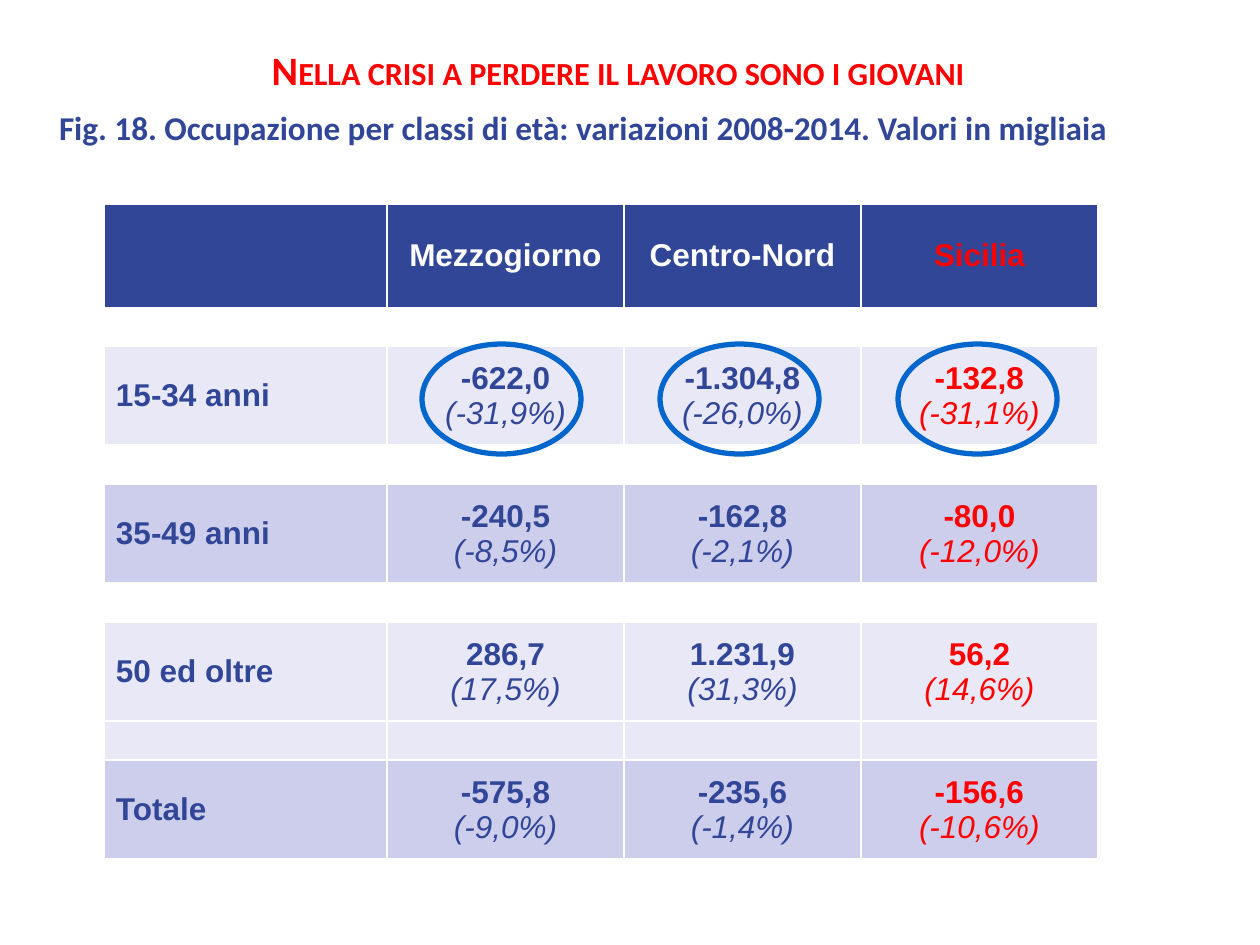
from pptx import Presentation
from pptx.dml.color import RGBColor
from pptx.enum.shapes import MSO_SHAPE as Shape
from pptx.enum.text import MSO_ANCHOR as Anchor, MSO_AUTO_SIZE as Fit, PP_ALIGN as Align
from pptx.oxml.ns import qn
from pptx.util import Emu, Pt
from lxml.etree import SubElement as Sub

NAVY, RED, WHITE = "314697", "FF0000", "FFFFFF"
PALE, LILAC, BLUE = "E8E8F6", "CDCDEC", "0066CC"

HEADS = ["", "Mezzogiorno", "Centro-Nord", "Sicilia"]
# Label, fill of the row, fill of the gap above it, values with shares
GROUPS = [
    ("15-34 anni", PALE, WHITE,
     [("-622,0", "(-31,9%)"), ("-1.304,8", "(-26,0%)"), ("-132,8", "(-31,1%)")]),
    ("35-49 anni", LILAC, WHITE,
     [("-240,5", "(-8,5%)"), ("-162,8", "(-2,1%)"), ("-80,0", "(-12,0%)")]),
    ("50 ed oltre", PALE, WHITE,
     [("286,7", "(17,5%)"), ("1.231,9", "(31,3%)"), ("56,2", "(14,6%)")]),
    ("Totale", LILAC, PALE,
     [("-575,8", "(-9,0%)"), ("-235,6", "(-1,4%)"), ("-156,6", "(-10,6%)")]),
]
COLS = [283, 237, 237, 237]
ROWS = [105, 38, 99] + [39, 99] * 3


def px(n):
    return Emu(round(n * 914400 / 126))


def box(*sides):
    return [px(n) for n in sides]


def paint(hue):
    return RGBColor.from_string(hue)


def style(par, size, face, hue, bold=True, slant=False):
    for run in par.runs:
        font = run.font
        font.size, font.name = Pt(size), face
        font.bold, font.italic = bold, slant
        font.color.rgb = paint(hue)


def pad(part, left, top, right, foot):
    part.margin_left, part.margin_top = px(left), px(top)
    part.margin_right, part.margin_bottom = px(right), px(foot)


def add_line(shape, text, size, hue, align):
    """Fill a text shape with one line of bold Calibri."""
    frame = shape.text_frame
    frame.text = text
    frame.word_wrap, frame.auto_size = True, Fit.SHAPE_TO_FIT_TEXT
    frame.vertical_anchor = Anchor.TOP
    pad(frame, 11, 5, 11, 5)
    par = frame.paragraphs[0]
    par.alignment = align
    style(par, size, "Calibri", hue)
    return par


def add_title(slide):
    title = slide.shapes.title
    title.left, title.top, title.width, title.height = box(71, 40, 1094, 62)
    par = add_line(title, "Nella crisi a perdere il lavoro sono i giovani",
                   23, RED, Align.CENTER)
    par.runs[0].font._element.set("cap", "small")


def add_caption(slide):
    shape = slide.shapes.add_textbox(*box(48, 105, 1191, 50))
    par = add_line(shape, "Fig. 18. Occupazione per classi di età: "
                   "variazioni 2008-2014. Valori in migliaia", 19, NAVY, Align.LEFT)
    par.line_spacing = 0.97


def edge(cell, top=1):
    """Draw white borders; they must come before the fill."""
    props = cell._tc.get_or_add_tcPr()
    for side, width in (("L", 1), ("R", 1), ("T", top), ("B", 1)):
        line = Sub(props, qn("a:ln" + side), w=str(Pt(width)))
        solid = Sub(line, qn("a:solidFill"))
        Sub(solid, qn("a:srgbClr"), val=WHITE)


def set_cell(cell, fill, lines=(), hue=NAVY, align=Align.CENTER, gaps=(0, 0, 0, 0), top=1):
    edge(cell, top)
    cell.fill.solid()
    cell.fill.fore_color.rgb = paint(fill)
    cell.vertical_anchor = Anchor.MIDDLE
    pad(cell, *gaps)
    cell.text_frame.text = "\n".join(lines)
    for n, par in enumerate(cell.text_frame.paragraphs):
        par.alignment = align
        style(par, 18, "Arial", hue, bold=n == 0, slant=n > 0)


def add_grid(slide):
    frame = slide.shapes.add_table(len(ROWS), len(COLS),
                                   *box(104, 203, sum(COLS), sum(ROWS)))
    grid = frame.table
    grid.first_row = grid.horz_banding = False
    for col, width in zip(grid.columns, COLS):
        col.width = px(width)
    for row, height in zip(grid.rows, ROWS):
        row.height = px(height)

    wide, tight = (12, 6, 12, 6), (1, 1, 1, 0)
    last = len(COLS) - 1
    # Header row
    for c, head in enumerate(HEADS):
        set_cell(grid.cell(0, c), NAVY, [head], RED if c == last else WHITE,
                 gaps=wide, top=3)
    # Each age group: a gap row, then a row of values
    for n, (label, fill, gap, pairs) in enumerate(GROUPS):
        r = 2 * n + 2
        for c in range(len(COLS)):
            set_cell(grid.cell(r - 1, c), gap)
        set_cell(grid.cell(r, 0), fill, [label], align=Align.LEFT, gaps=wide)
        for c, pair in enumerate(pairs, 1):
            set_cell(grid.cell(r, c), fill, pair, RED if c == last else NAVY, gaps=tight)


def add_ring(slide, left):
    ring = slide.shapes.add_shape(Shape.OVAL, *box(left, 344, 159, 110))
    ring.shadow.inherit = False
    ring.fill.background()
    ring.line.color.rgb = paint(BLUE)
    ring.line.width = Pt(3)


def main():
    deck = Presentation()
    deck.slide_width, deck.slide_height = box(1260, 945)
    slide = deck.slides.add_slide(deck.slide_layouts[5])
    add_grid(slide)
    add_caption(slide)
    add_title(slide)
    # Rings around the youngest group
    for n in range(3):
        add_ring(slide, 422 + 238 * n)
    deck.save("out.pptx")


if __name__ == "__main__":
    main()
